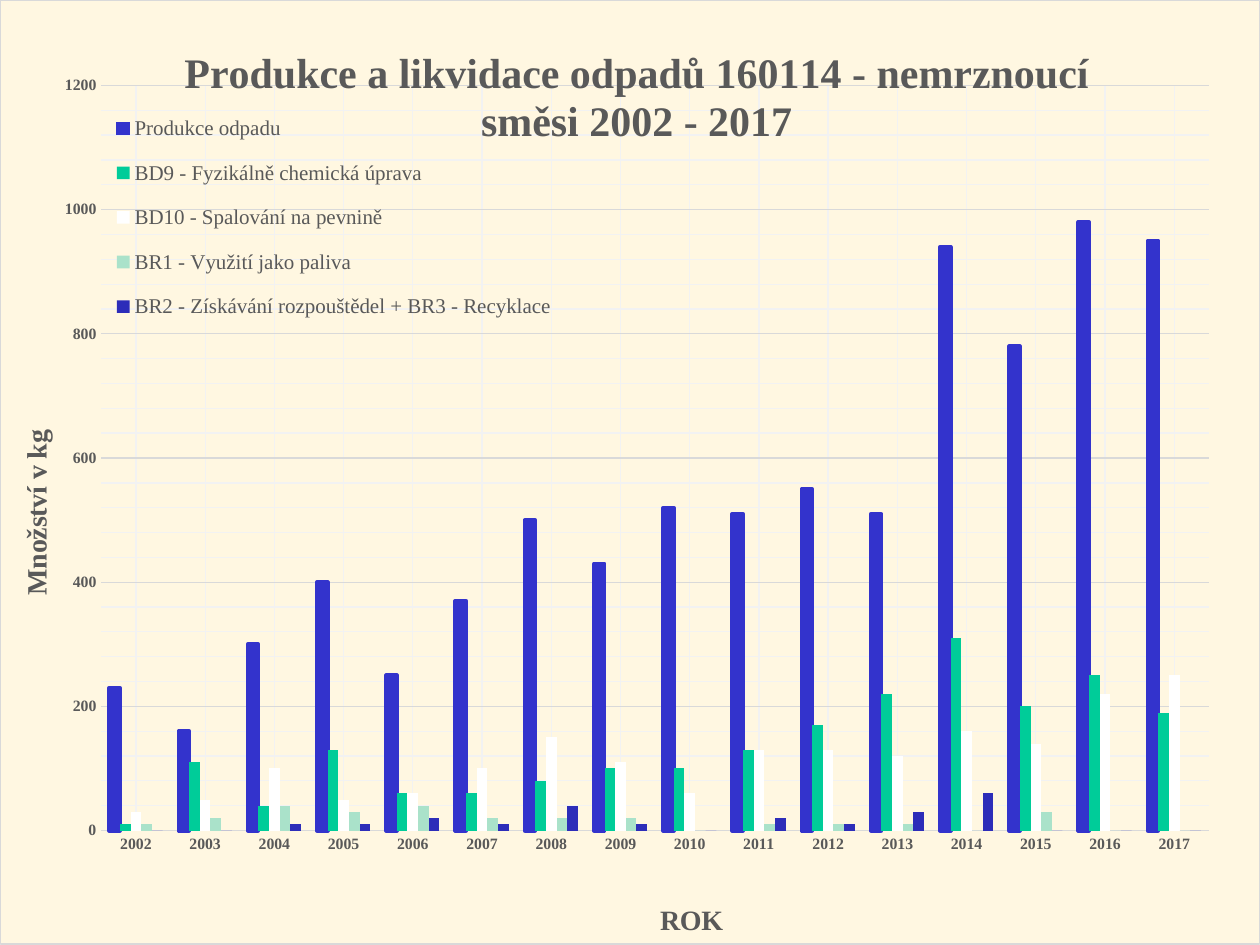
from dataclasses import dataclass

from lxml import etree
from pptx import Presentation
from pptx.chart.data import CategoryChartData
from pptx.dml.color import RGBColor
from pptx.enum.chart import XL_CHART_TYPE, XL_LEGEND_POSITION, XL_TICK_MARK
from pptx.oxml import parse_xml
from pptx.oxml.ns import nsdecls, qn
from pptx.util import Pt

COLUMNS = XL_CHART_TYPE.COLUMN_CLUSTERED
RIGHT = XL_LEGEND_POSITION.RIGHT
NO_TICK = XL_TICK_MARK.NONE
BLANK_LAYOUT = 6


@dataclass(frozen=True)
class Theme:
    """Colours, typeface and type sizes of the slide."""
    font: str = "Times New Roman"
    background: str = "FFF7E1"
    text: str = "595959"
    rule: str = "D9D9D9"
    minor_rule: str = "F2F2F2"
    title_size: int = 24
    axis_title_size: int = 16
    legend_size: int = 12
    tick_size: int = 9
    rule_width: float = 0.75
    outline_width: float = 2.25


THEME = Theme()

YEARS = [str(year) for year in range(2002, 2018)]
WASTE = [
    ("Produkce odpadu", "3333CC",
     (230, 160, 300, 400, 250, 370, 500, 430, 520, 510, 550, 510, 940, 780, 980, 950)),
    ("BD9 - Fyzikálně chemická úprava", "00CC99",
     (10, 110, 40, 130, 60, 60, 80, 100, 100, 130, 170, 220, 310, 200, 250, 190)),
    ("BD10 - Spalování na pevnině", "FFFFFF",
     (30, 50, 100, 50, 60, 100, 150, 110, 60, 130, 130, 120, 160, 140, 220, 250)),
    ("BR1 - Využití jako paliva", "AAE2CA",
     (10, 20, 40, 30, 40, 20, 20, 20, 0, 10, 10, 10, 0, 30, 0, 0)),
    ("BR2 - Získávání rozpouštědel + BR3 - Recyklace", "2D2DB9",
     (0, 0, 10, 10, 20, 10, 40, 10, 0, 20, 10, 30, 60, 0, 0, 0)),
]


def style_font(font, size, bold=False):
    """Apply the theme's typeface and text colour."""
    font.name = THEME.font
    font.size = Pt(size)
    font.bold = bold
    font.color.rgb = RGBColor.from_string(THEME.text)


def style_line(line, color, width=THEME.rule_width):
    """Give a line a solid colour and a width in points."""
    line.color.rgb = RGBColor.from_string(color)
    line.width = Pt(width)


def shape_properties(line_color, fill=""):
    """Return chart shape properties with a thin line and an optional fill."""
    solid = '<a:solidFill><a:srgbClr val="{}"/></a:solidFill>'
    return parse_xml(
        f'<c:spPr {nsdecls("c", "a")}>{solid.format(fill) if fill else ""}'
        f'<a:ln w="{Pt(THEME.rule_width)}">{solid.format(line_color)}</a:ln></c:spPr>')


def manual_layout(inner=False, **fractions):
    """Return a layout element placed by fractions of the chart."""
    layout = parse_xml(f"<c:layout {nsdecls('c')}><c:manualLayout/></c:layout>")
    manual = layout[0]
    settings = {"layoutTarget": "inner"} if inner else {}
    settings |= {f"{key}Mode": "edge" for key in fractions if key in "xy"}
    settings |= fractions
    for key, setting in settings.items():
        etree.SubElement(manual, qn(f"c:{key}")).set("val", str(setting))
    return layout


def place_after(anchor, overlay, **fractions):
    """Place a title or legend, with its layout following the anchor element."""
    owner = anchor.getparent()
    for tag in ("c:layout", "c:overlay"):
        for child in owner.findall(qn(tag)):
            owner.remove(child)
    layout = manual_layout(**fractions)
    anchor.addnext(layout)
    layout.addnext(parse_xml(f'<c:overlay {nsdecls("c")} val="{int(overlay)}"/>'))


def write_title(title, words, size, x, y, overlay=False, rotation=0):
    """Write a chart or axis title and put its corner at x, y."""
    frame = title.text_frame
    run = frame.paragraphs[0].add_run()
    run.text = words
    style_font(run.font, size, bold=True)
    tx = title._element.find(qn("c:tx"))
    tx.find(".//" + qn("a:bodyPr")).set("rot", str(rotation * 60000))
    place_after(tx, overlay, x=x, y=y)


def style_axes(chart):
    """Format the year and quantity axes with their grids and titles."""
    years, quantity = chart.category_axis, chart.value_axis
    for axis in (years, quantity):
        axis.major_tick_mark = axis.minor_tick_mark = NO_TICK
        axis.has_minor_gridlines = True
        minor_grid = axis._element.find(qn("c:minorGridlines"))
        minor_grid.append(shape_properties(THEME.minor_rule))
        style_font(axis.tick_labels.font, THEME.tick_size, bold=True)
    style_line(years.format.line, THEME.rule)
    quantity.format.line.fill.background()
    quantity.has_major_gridlines = True
    style_line(quantity.major_gridlines.format.line, THEME.rule)
    quantity.minimum_scale, quantity.maximum_scale = 0, 1200
    quantity.major_unit, quantity.minor_unit = 200, 40
    write_title(years.axis_title, "ROK", THEME.axis_title_size, 0.52, 0.95)
    write_title(quantity.axis_title, "Množství v kg", THEME.axis_title_size,
                0.01, 0.45, rotation=-90)


def style_columns(chart):
    """Colour the columns and outline the production series."""
    plot = chart.plots[0]
    plot.gap_width, plot.overlap = 150, 0
    plot.vary_by_categories = False
    for series, (_, color, _) in zip(plot.series, WASTE):
        series.invert_if_negative = False
        series.format.fill.solid()
        series.format.fill.fore_color.rgb = RGBColor.from_string(color)
    production = plot.series[0]
    style_line(production.format.line, WASTE[0][1], THEME.outline_width)


def style_legend(chart):
    """Lay the legend over the upper left of the plot."""
    chart.has_legend = True
    legend = chart.legend
    legend.position = RIGHT
    place_after(legend._element.find(qn("c:legendPos")), True,
                x=0.08, y=0.1, w=0.37, h=0.26)
    style_font(legend.font, THEME.legend_size)


def style_area(chart):
    """Fill and frame the chart area and fix the plot within it."""
    chart_part = chart._chartSpace.find(qn("c:chart"))
    chart_part.addnext(shape_properties(THEME.rule, THEME.background))
    plot_area = chart_part.find(qn("c:plotArea"))
    for layout in plot_area.findall(qn("c:layout")):
        plot_area.remove(layout)
    plot_area.insert(0, manual_layout(inner=True, x=0.08, y=0.09, w=0.88, h=0.79))


def add_waste_chart(slide, left, top, width, height):
    """Add the chart of waste production and disposal in the given box."""
    waste_data = CategoryChartData()
    waste_data.categories = YEARS
    for name, _, kilograms in WASTE:
        waste_data.add_series(name, kilograms)
    chart = slide.shapes.add_chart(COLUMNS, left, top, width, height, waste_data).chart
    style_font(chart.font, THEME.tick_size)
    style_area(chart)
    write_title(chart.chart_title,
                "Produkce a likvidace odpadů 160114 - nemrznoucí směsi 2002 - 2017",
                THEME.title_size, 0.14, 0.04, overlay=True)
    style_axes(chart)
    style_columns(chart)
    style_legend(chart)


def main():
    """Build the one-slide presentation."""
    deck = Presentation()
    deck.slide_width, deck.slide_height = Pt(720), Pt(540)
    slide = deck.slides.add_slide(deck.slide_layouts[BLANK_LAYOUT])
    add_waste_chart(slide, Pt(0), Pt(0), deck.slide_width, deck.slide_height)
    deck.save("out.pptx")


if __name__ == "__main__":
    main()
